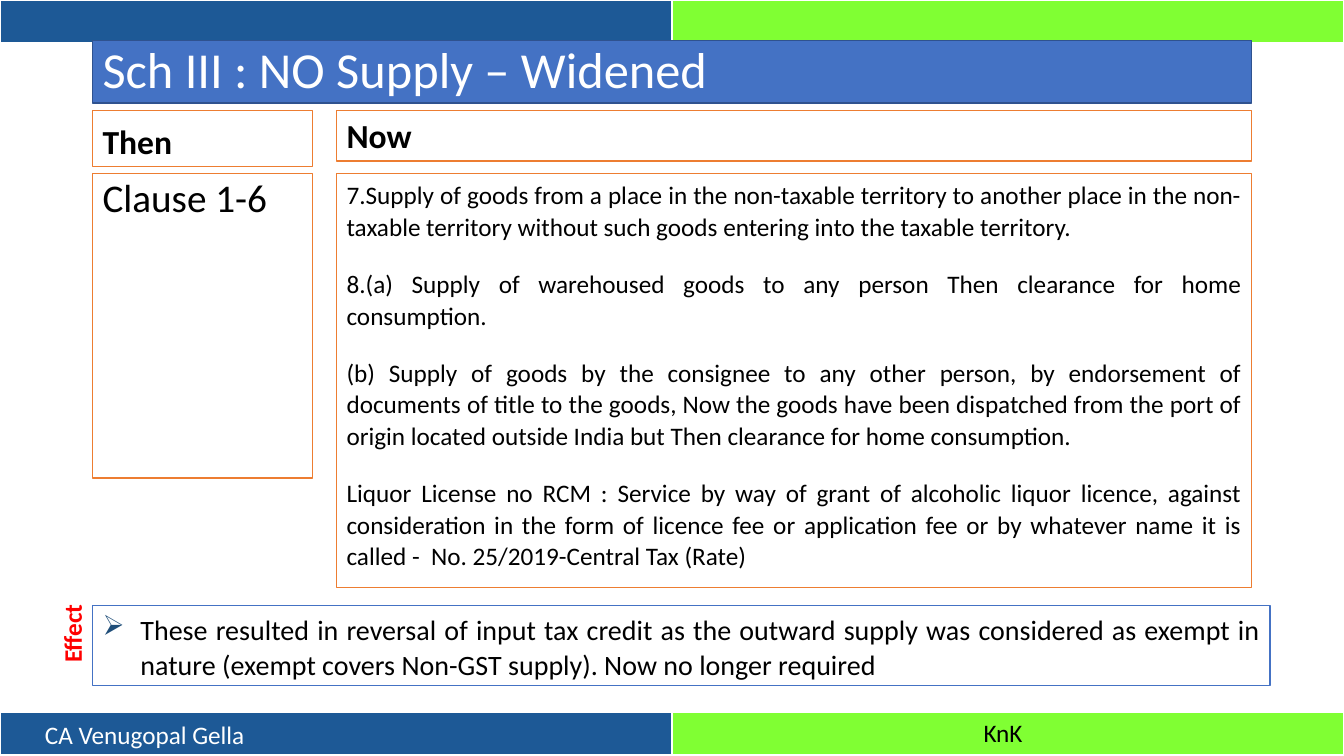
from dataclasses import dataclass

from lxml import etree
from pptx import Presentation
from pptx.dml.color import RGBColor
from pptx.enum.shapes import MSO_SHAPE
from pptx.enum.text import MSO_ANCHOR, PP_ALIGN
from pptx.oxml.ns import qn
from pptx.util import Pt

RECT = MSO_SHAPE.RECTANGLE
TOP, MIDDLE, BOTTOM = MSO_ANCHOR.TOP, MSO_ANCHOR.MIDDLE, MSO_ANCHOR.BOTTOM
LEFT, JUSTIFY = PP_ALIGN.LEFT, PP_ALIGN.JUSTIFY


@dataclass(frozen=True)
class Theme:
    font: str = "Calibri"
    white: str = "FFFFFF"
    black: str = "000000"
    navy: str = "1D5996"
    lime: str = "80FF33"
    blue: str = "4472C4"
    blue_edge: str = "2F528F"
    orange: str = "ED7D31"
    red: str = "FF0000"
    bullet: str = "1F4E79"
    title: int = 36
    clause: int = 28
    heading: int = 24
    effect: int = 20
    body: int = 18


T = Theme()
WIDTH, HEIGHT, BAND = 960, 540, 31
THEN_X, THEN_W = 66.2, 157
NOW_X, NOW_W = 240.5, 653.5
HEAD_Y, BODY_Y = 79, 124

NOW_ITEMS = [
    "7.Supply of goods from a place in the non-taxable territory to another place in "
    "the non-taxable territory without such goods entering into the taxable territory.",
    "8.(a) Supply of warehoused goods to any person Then clearance for home consumption.",
    "(b) Supply of goods by the consignee to any other person, by endorsement of "
    "documents of title to the goods, Now the goods have been dispatched from the port "
    "of origin located outside India but Then clearance for home consumption.",
    "Liquor License no RCM : Service by way of grant of alcoholic liquor licence, "
    "against consideration in the form of licence fee or application fee or by whatever "
    "name it is called -  No. 25/2019-Central Tax (Rate)",
]
EFFECT = ("These resulted in reversal of input tax credit as the outward supply was "
          "considered as exempt in nature (exempt covers Non-GST supply). "
          "Now no longer required")


def rgb(color):
    return RGBColor.from_string(color)


def write(tf, paragraphs, size, color=T.black, bold=False, align=LEFT,
          spacing=1.0, before=0, after=0):
    tf.text = "\n".join(paragraphs)
    for p in tf.paragraphs:
        p.alignment = align
        p.line_spacing = spacing
        p.space_before, p.space_after = Pt(before), Pt(after)
        for r in p.runs:
            r.font.name, r.font.size, r.font.bold = T.font, Pt(size), bold
            r.font.color.rgb = rgb(color)


def add_box(s, x, y, w, h, paragraphs, size, fill=T.white, line=T.orange,
            anchor=TOP, **style):
    sp = s.shapes.add_shape(RECT, Pt(x), Pt(y), Pt(w), Pt(h))
    sp.shadow.inherit = False
    sp.fill.solid()
    sp.fill.fore_color.rgb = rgb(fill)
    sp.line.color.rgb = rgb(line)
    sp.line.width = Pt(1)
    tf = sp.text_frame
    tf.word_wrap = True
    tf.vertical_anchor = anchor
    write(tf, paragraphs, size, **style)
    return sp


def add_label(s, x, y, w, text, color, bold=False, rotation=0):
    sp = s.shapes.add_textbox(Pt(x), Pt(y), Pt(w), Pt(29))
    sp.rotation = rotation
    sp.text_frame.word_wrap = False
    write(sp.text_frame, [text], T.body, color, bold)


def add_border(cell, side, width):
    tcPr = cell._tc.get_or_add_tcPr()
    ln = etree.SubElement(tcPr, qn(f"a:ln{side}"), w=str(Pt(width)))
    fill = etree.SubElement(ln, qn("a:solidFill"))
    etree.SubElement(fill, qn("a:srgbClr"), val=T.white)


def add_band(s, y):
    table = s.shapes.add_table(1, 2, 0, Pt(y), Pt(WIDTH), Pt(BAND)).table
    for cell, color in zip(table.rows[0].cells, (T.navy, T.lime)):
        for side, width in (("L", 1), ("R", 1), ("T", 1), ("B", 3)):
            add_border(cell, side, width)
        cell.fill.solid()
        cell.fill.fore_color.rgb = rgb(color)


def add_bullet(p, char, color, indent):
    pPr = p._p.get_or_add_pPr()
    pPr.set("marL", str(Pt(indent)))
    pPr.set("indent", str(-Pt(indent)))
    bu_color = etree.SubElement(pPr, qn("a:buClr"))
    etree.SubElement(bu_color, qn("a:srgbClr"), val=color)
    etree.SubElement(pPr, qn("a:buChar"), char=char)


def main():
    prs = Presentation()
    prs.slide_width, prs.slide_height = Pt(WIDTH), Pt(HEIGHT)
    s = prs.slides.add_slide(prs.slide_layouts[6])

    for y in (HEIGHT - BAND, 0):
        add_band(s, y)
    add_label(s, 25, 510, 159, "CA Venugopal Gella", T.white)
    add_label(s, 695.5, 509, 45, "KnK", T.black)

    add_box(s, THEN_X, 29, 828, 44.5, ["Sch III : NO Supply – Widened"], T.title,
            fill=T.blue, line=T.blue_edge, anchor=MIDDLE, color=T.white, spacing=0.9)
    for x, w, h, heading in ((THEN_X, THEN_W, 40, "Then"), (NOW_X, NOW_W, 36, "Now")):
        add_box(s, x, HEAD_Y, w, h, [heading], T.heading, anchor=BOTTOM,
                bold=True, spacing=0.9, before=10)
    add_box(s, THEN_X, BODY_Y, THEN_W, 217.5, ["Clause 1-6"], T.clause,
            align=JUSTIFY, spacing=0.9, before=10)
    add_box(s, NOW_X, BODY_Y, NOW_W, 295.5, NOW_ITEMS, T.body,
            align=JUSTIFY, spacing=1.04, before=10, after=8.5)

    effect = add_box(s, THEN_X, 432.7, 841, 57, [EFFECT], T.effect, line=T.blue,
                     align=JUSTIFY, spacing=1.04, after=2.2)
    add_bullet(effect.text_frame.paragraphs[0], "➢", T.bullet, 27)
    add_label(s, 21, 435.5, 61, "Effect", T.red, bold=True, rotation=270)

    prs.save("out.pptx")


if __name__ == "__main__":
    main()
